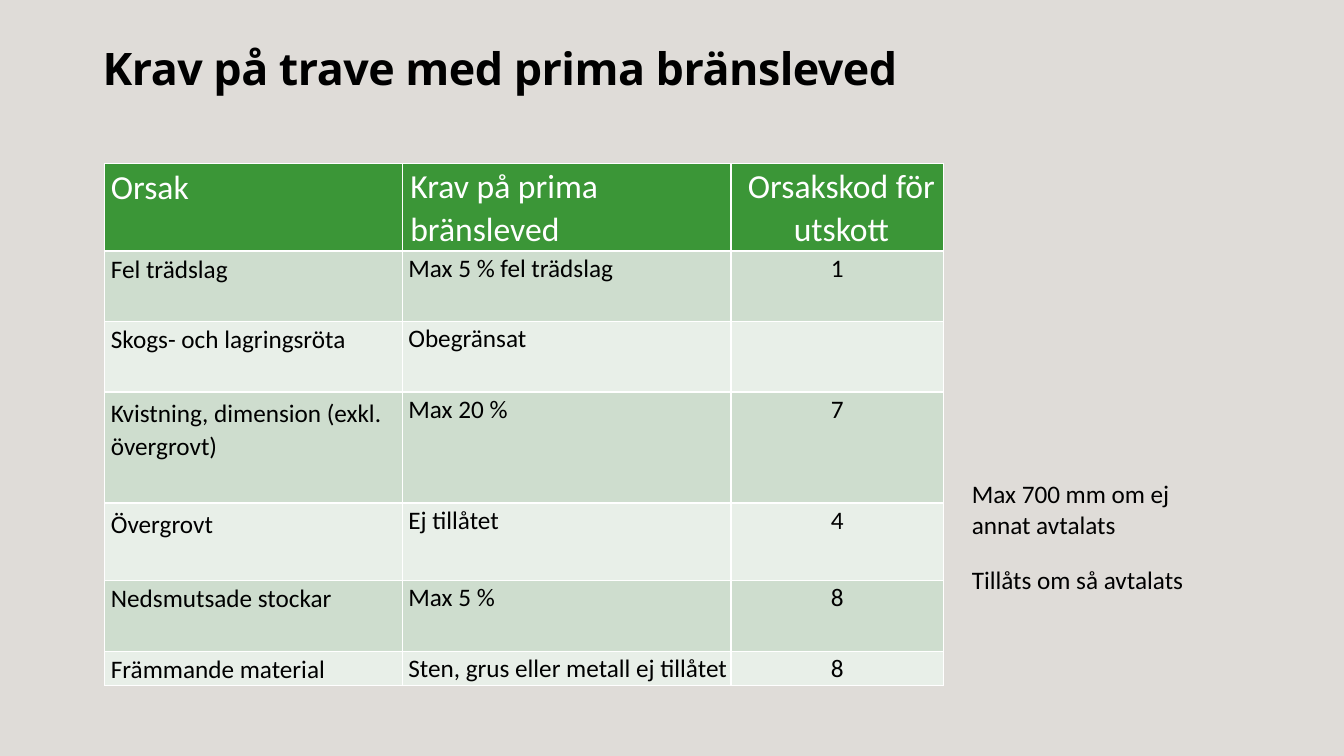
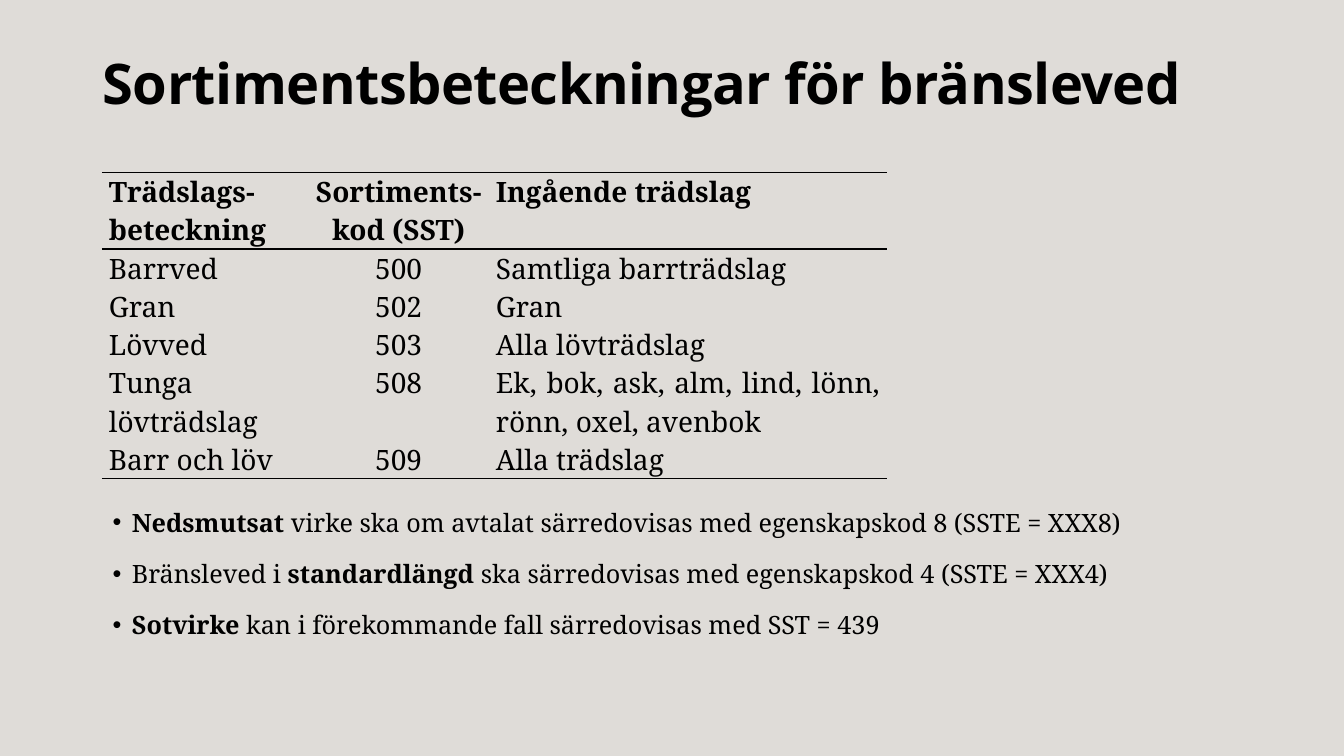
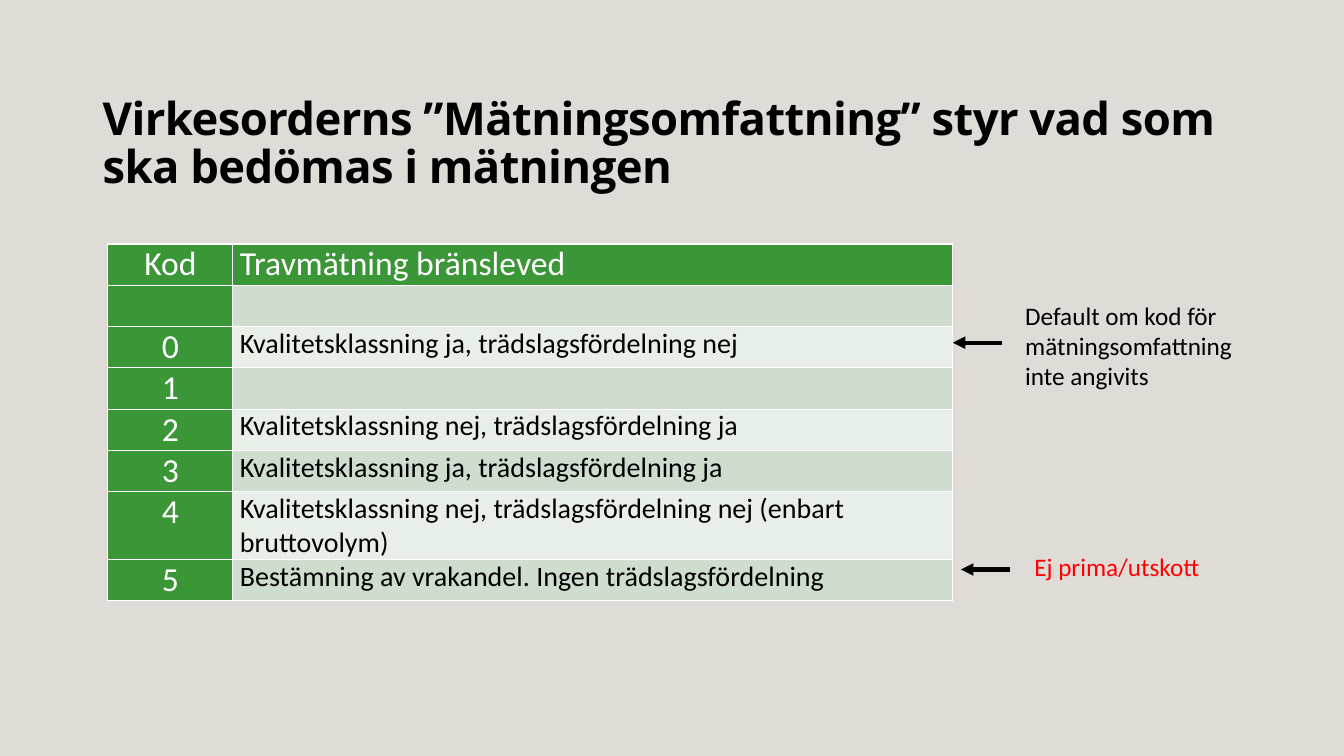
from lxml import etree
from pptx import Presentation
from pptx.dml.color import RGBColor
from pptx.enum.shapes import MSO_CONNECTOR
from pptx.enum.text import MSO_ANCHOR, PP_ALIGN
from pptx.oxml.ns import qn
from pptx.util import Inches, Pt

LEFT, CENTER, JUSTIFY = PP_ALIGN.LEFT, PP_ALIGN.CENTER, PP_ALIGN.JUSTIFY
TOP = MSO_ANCHOR.TOP
STRAIGHT = MSO_CONNECTOR.STRAIGHT

COLORS = {
    "background": "DFDCD8",
    "text": "000000",
    "white": "FFFFFF",
    "green": "3B9637",
    "band_dark": "CEDDCE",
    "band_light": "E8EFE8",
    "warning": "FF0000",
}
TITLE_FONT, TABLE_FONT, SERIF_FONT = "Open Sans", "Calibri", "Noto Serif"
SIDES = {"l": "a:lnL", "r": "a:lnR", "t": "a:lnT", "b": "a:lnB"}


def rgb(name):
    return RGBColor.from_string(COLORS[name])


def band(row):
    return "band_dark" if row % 2 else "band_light"


class Deck:
    """Shared style and the slide being built."""

    def __init__(self):
        self.prs = Presentation()
        self.prs.slide_width, self.prs.slide_height = Inches(13.33), Inches(7.5)
        self.slide = None

    def new_slide(self, title, top, size):
        self.slide = self.prs.slides.add_slide(self.prs.slide_layouts[6])
        fill = self.slide.background.fill
        fill.solid()
        fill.fore_color.rgb = rgb("background")
        frame = self.frame(0.92, top, 11.5, 0.98)
        frame.margin_top = Inches(0.09)
        heading = frame.paragraphs[0]
        heading.line_spacing = 0.88
        heading.add_run().text = title
        heading.runs[0].font._element.set("spc", "-40")
        self.style(heading, TITLE_FONT, size, bold=True)

    def frame(self, left, top, width, height):
        box = self.slide.shapes.add_textbox(
            Inches(left), Inches(top), Inches(width), Inches(height))
        box.text_frame.word_wrap = True
        return box.text_frame

    def style(self, paragraph, font, size, color="text", bold=None):
        paragraph.font.name, paragraph.font.size = font, Pt(size)
        paragraph.font.color.rgb = rgb(color)
        paragraph.font.bold = bold

    def note(self, text, left, top, height, color="text"):
        paragraph = self.frame(left, top, 2.54, height).paragraphs[0]
        paragraph.text = text
        self.style(paragraph, TABLE_FONT, 18, color)

    def bullets(self, items, left, top, width, height):
        """Each item is a list of (text, bold) parts."""
        frame = self.frame(left, top, width, height)
        for i, parts in enumerate(items):
            paragraph = frame.paragraphs[0] if i == 0 else frame.add_paragraph()
            paragraph.line_spacing = 1.14
            paragraph.space_before = Pt(6 if i else 0)
            paragraph.space_after = Pt(6)
            props = paragraph._p.get_or_add_pPr()
            props.set("marL", str(Inches(0.2)))
            props.set("indent", str(Inches(-0.19)))
            etree.SubElement(props, qn("a:buFont"), typeface="Arial")
            etree.SubElement(props, qn("a:buChar"), char="•")
            for text, bold in parts:
                run = paragraph.add_run()
                run.text, run.font.bold = text, bold
            self.style(paragraph, SERIF_FONT, 18)

    def arrow(self, start, end, y):
        line = self.slide.shapes.add_connector(
            STRAIGHT, Inches(start), Inches(y), Inches(end), Inches(y))
        line.line.color.rgb, line.line.width = rgb("text"), Pt(3)
        etree.SubElement(line.line._get_or_add_ln(), qn("a:tailEnd"), type="triangle")
        etree.SubElement(line._element.spPr, qn("a:effectLst"))

    def table(self, left, top, widths, heights, rows, look):
        """look(row, column) gives the cell settings for that position."""
        table = self.slide.shapes.add_table(
            len(heights), len(widths), Inches(left), Inches(top),
            Inches(sum(widths)), Inches(sum(heights))).table
        table.first_row = table.horz_banding = False
        for column, width in zip(table.columns, widths):
            column.width = Inches(width)
        for row, height in zip(table.rows, heights):
            row.height = Inches(height)
        for r, texts in enumerate(rows):
            for c, text in enumerate(texts):
                self.cell(table.cell(r, c), text, **look(r, c))

    def cell(self, cell, text, size, font=TABLE_FONT, color="text", bold=False,
             align=LEFT, spacing=1, insets=(0.07, 0, 0.07, 0), fill=None,
             edge="white", sides="lrtb"):
        cell.margin_left, cell.margin_top, cell.margin_right, cell.margin_bottom = (
            Inches(inset) for inset in insets)
        cell.vertical_anchor = TOP
        cell.text_frame.text = text
        for paragraph in cell.text_frame.paragraphs:
            paragraph.alignment, paragraph.line_spacing = align, spacing
            self.style(paragraph, font, size, color, bold)
        # Borders come before the fill in the cell properties
        props = cell._tc.get_or_add_tcPr()
        for side, tag in SIDES.items():
            line = etree.SubElement(props, qn(tag), w=str(Pt(1)))
            if side in sides:
                paint = etree.SubElement(line, qn("a:solidFill"))
                etree.SubElement(paint, qn("a:srgbClr"), val=COLORS[edge])
            else:
                etree.SubElement(line, qn("a:noFill"))
        if fill:
            cell.fill.solid()
            cell.fill.fore_color.rgb = rgb(fill)
        else:
            cell.fill.background()


def requirement_look(row, column):
    look = {"size": 18, "spacing": 1.07, "fill": band(row),
            "align": CENTER if column == 2 else LEFT}
    if column == 0:
        look["insets"] = (0.06, 0.04 if row in (3, 4) else 0.01, 0.06, 0)
    else:
        look["insets"] = (0.06 if column == 1 else 0, 0, 0, 0)
    if row == 0:
        look.update(size=24, color="white", fill="green")
        if column:
            look["insets"] = (0.08, 0, 0, 0)
    return look


def assortment_look(row, column):
    sides = {0: "tb", 1: "t", 5: "b"}.get(row, "")
    return {"size": 20, "font": SERIF_FONT, "bold": row == 0, "edge": "text",
            "sides": sides, "align": CENTER if column == 1 else JUSTIFY}


def scope_look(row, column):
    header = row == 0 or column == 0
    return {"size": 24 if header else 20, "color": "white" if header else "text",
            "fill": "green" if header else band(row),
            "align": CENTER if column == 0 else LEFT}


def main():
    deck = Deck()

    # Requirements for a pile of prime fuelwood
    deck.new_slide("Krav på trave med prima bränsleved", 0.38, 32)
    deck.table(1.04, 1.62, [2.95, 3.26, 2.11], [0.87, 0.7, 0.7, 1.1, 0.77, 0.7, 0.34], [
        ("Orsak", "Krav på prima\nbränsleved", "Orsakskod för utskott"),
        ("Fel trädslag", "Max 5 % fel trädslag", "1"),
        ("Skogs- och lagringsröta", "Obegränsat", ""),
        ("Kvistning, dimension (exkl. övergrovt)", "Max 20 %", "7"),
        ("Övergrovt", "Ej tillåtet", "4"),
        ("Nedsmutsade stockar", "Max 5 %", "8"),
        ("Främmande material", "Sten, grus eller metall ej tillåtet", "8"),
    ], requirement_look)
    deck.note("Max 700 mm om ej annat avtalats", 9.54, 4.7, 0.71)
    deck.note("Tillåts om så avtalats", 9.54, 5.55, 0.4)

    # Assortment codes
    deck.new_slide("Sortimentsbeteckningar för bränsleved", 0.48, 40)
    deck.bullets([
        [("Nedsmutsat", True),
         (" virke ska om avtalat särredovisas med egenskapskod 8 (SSTE = XXX8)", False)],
        [("Bränsleved i ", False), ("standardlängd", True),
         (" ska särredovisas med egenskapskod 4 (SSTE = XXX4)", False)],
        [("Sotvirke ", True),
         ("kan i förekommande fall särredovisas med SST = 439", False)],
    ], 1.01, 4.94, 10.77, 1.77)
    deck.table(1.01, 1.71, [2.05, 1.79, 3.95], [0.76, 0.38, 0.38, 0.38, 0.76, 0.38], [
        ("Trädslags-beteckning", "Sortiments-kod (SST)", "Ingående trädslag"),
        ("Barrved", "500", "Samtliga barrträdslag"),
        ("Gran", "502", "Gran"),
        ("Lövved", "503", "Alla lövträdslag"),
        ("Tunga lövträdslag", "508", "Ek, bok, ask, alm, lind, lönn, rönn, oxel, avenbok"),
        ("Barr och löv", "509", "Alla trädslag"),
    ], assortment_look)

    # Measuring scope codes
    deck.new_slide("Virkesorderns ”Mätningsomfattning” styr vad som ska bedömas i mätningen",
                   0.87, 32.4)
    deck.table(1.07, 2.42, [1.24, 7.14], [0.41] * 6 + [0.67, 0.41], [
        ("Kod", "Travmätning bränsleved"),
        ("", ""),
        ("0", "Kvalitetsklassning ja, trädslagsfördelning nej"),
        ("1", ""),
        ("2", "Kvalitetsklassning nej, trädslagsfördelning ja"),
        ("3", "Kvalitetsklassning ja, trädslagsfördelning ja"),
        ("4", "Kvalitetsklassning nej, trädslagsfördelning nej (enbart bruttovolym)"),
        ("5", "Bestämning av vrakandel. Ingen trädslagsfördelning"),
    ], scope_look)
    deck.note("Default om kod för mätningsomfattning inte angivits", 10.07, 2.93, 1.01)
    deck.arrow(9.94, 9.45, 3.4)
    deck.note("Ej prima/utskott", 10.16, 5.42, 0.4, "warning")
    deck.arrow(10.02, 9.53, 5.65)

    deck.prs.save("out.pptx")


if __name__ == "__main__":
    main()
